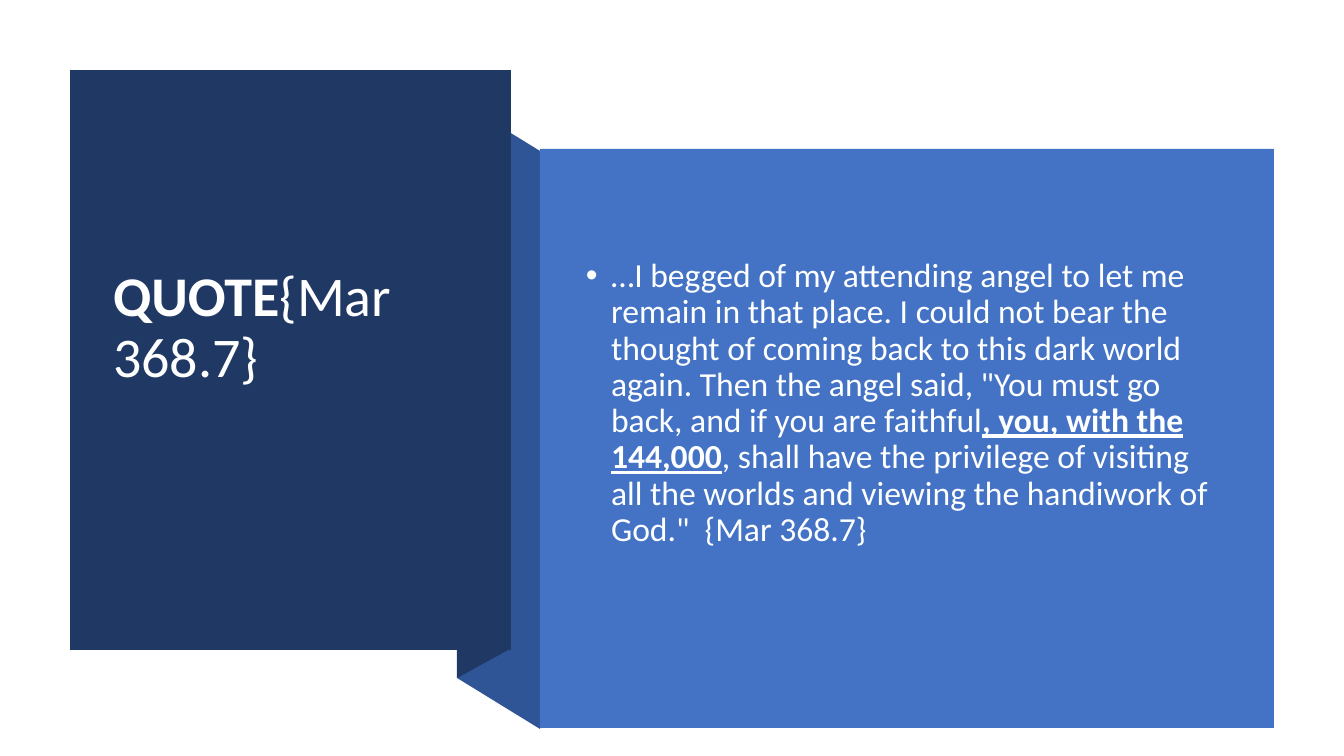
import pptx
import pptx.dml.color
import pptx.enum.shapes
import pptx.enum.text
import pptx.util
from lxml import etree

PX = 914400 / 100.8
NAVY = pptx.dml.color.RGBColor(0x20, 0x38, 0x64)
FOLD_BLUE = pptx.dml.color.RGBColor(0x2F, 0x55, 0x97)
PANEL_BLUE = pptx.dml.color.RGBColor(0x44, 0x72, 0xC4)
WHITE = pptx.dml.color.RGBColor(0xFF, 0xFF, 0xFF)
OFF_WHITE = pptx.dml.color.RGBColor(0xFE, 0xFF, 0xFF)

TITLE_RUNS = [("QUOTE", {"bold": True}), ("{Mar 368.7}", {"bold": False})]
QUOTE_RUNS = [
    ("…I begged of my attending angel to let me remain in that place. "
     "I could not bear the thought of coming back to this dark world again. "
     "Then the angel said, \"You must go back, and if you are faithful", {}),
    (", you, with the 144,000", {"bold": True, "underline": True}),
    (", shall have the privilege of visiting all the worlds and viewing "
     "the handiwork of God.\"  {Mar 368.7}", {}),
]


def px(length):
    return pptx.util.Emu(round(length * PX))


def paint(shape, color):
    shape.shadow.inherit = False
    shape.fill.solid()
    shape.fill.fore_color.rgb = color
    shape.line.fill.background()


def add_panel(slide, box, color):
    panel = slide.shapes.add_shape(
        pptx.enum.shapes.MSO_SHAPE.RECTANGLE, *map(px, box))
    paint(panel, color)


def add_fold(slide, box, slant, color):
    left, top, width, height = box
    right, bottom = left + width, top + height
    rise, drop = max(-slant, 0), max(slant, 0)
    outline = slide.shapes.build_freeform(right, bottom - rise, scale=PX)
    outline.add_line_segments([
        (left, bottom - drop), (left, top + rise), (right, top + drop)])
    paint(outline.convert_to_shape(), color)


def write_text(holder, box, runs, size, color, bottom_inset):
    holder.left, holder.top, holder.width, holder.height = map(px, box)
    frame = holder.text_frame
    frame_format = {
        "word_wrap": True,
        "auto_size": pptx.enum.text.MSO_AUTO_SIZE.NONE,
        "vertical_anchor": pptx.enum.text.MSO_ANCHOR.MIDDLE,
        "margin_bottom": px(bottom_inset),
    }
    for name, value in frame_format.items():
        setattr(frame, name, value)
    paragraph = frame.paragraphs[0]
    paragraph.alignment = pptx.enum.text.PP_ALIGN.LEFT
    paragraph.line_spacing = 0.9
    for text, emphasis in runs:
        run = paragraph.add_run()
        run.text = text
        font_format = {"name": "Calibri", "size": pptx.util.Pt(size), **emphasis}
        for name, value in font_format.items():
            setattr(run.font, name, value)
        run.font.color.rgb = color
    return paragraph


def add_title_region(slide, box):
    left, top, width, height = box
    add_panel(slide, box, NAVY)
    title = slide.shapes.title
    slide.shapes.element.append(title.element)
    text_box = (left + 33, top + 38, width - 67, height - 77)
    write_text(title, text_box, TITLE_RUNS, 40, WHITE, 66)


def add_quote_region(slide, box):
    left, top, width, height = box
    add_panel(slide, box, PANEL_BLUE)
    text_box = (left + 36, top + 41, width - 78, height - 101)
    quote = slide.shapes.add_textbox(*map(px, text_box))
    paragraph = write_text(quote, text_box, QUOTE_RUNS, 24, OFF_WHITE, 56)
    paragraph.space_before = pptx.util.Pt(10)
    properties = paragraph.runs[0]._r.getparent().get_or_add_pPr()
    indent = pptx.util.Inches(0.25)
    properties.set("marL", str(indent))
    properties.set("indent", str(-indent))
    namespace = "{http://schemas.openxmlformats.org/drawingml/2006/main}"
    etree.SubElement(properties, namespace + "buFont", typeface="Arial")
    etree.SubElement(properties, namespace + "buChar", char="•")


def main():
    deck = pptx.Presentation()
    deck.slide_width = pptx.util.Inches(13.333)
    deck.slide_height = pptx.util.Inches(7.5)
    slide = deck.slides.add_slide(deck.slide_layouts[5])
    add_fold(slide, (457, 100, 83, 629), 51, FOLD_BLUE)
    add_fold(slide, (457, 70, 53, 608), -29, NAVY)
    add_title_region(slide, (70, 70, 441, 580))
    add_quote_region(slide, (540, 149, 734, 579))
    deck.save("out.pptx")


if __name__ == "__main__":
    main()
